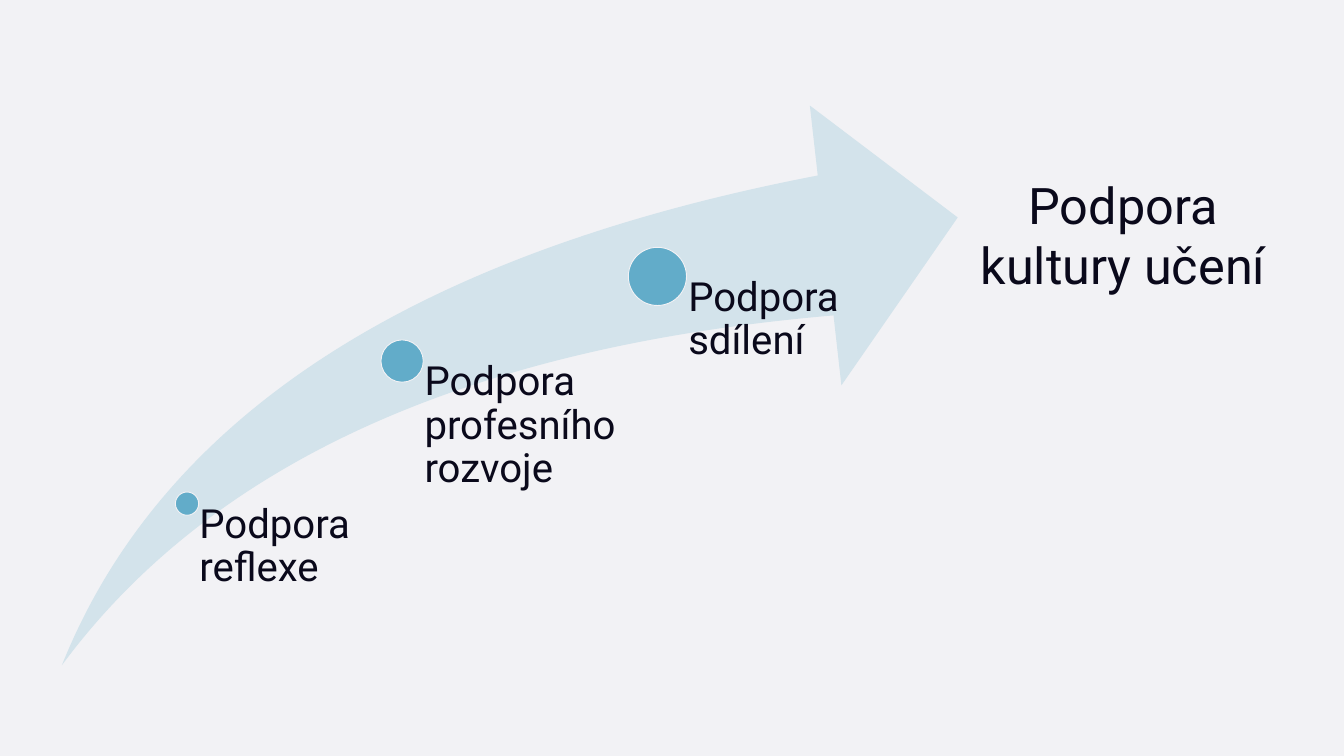
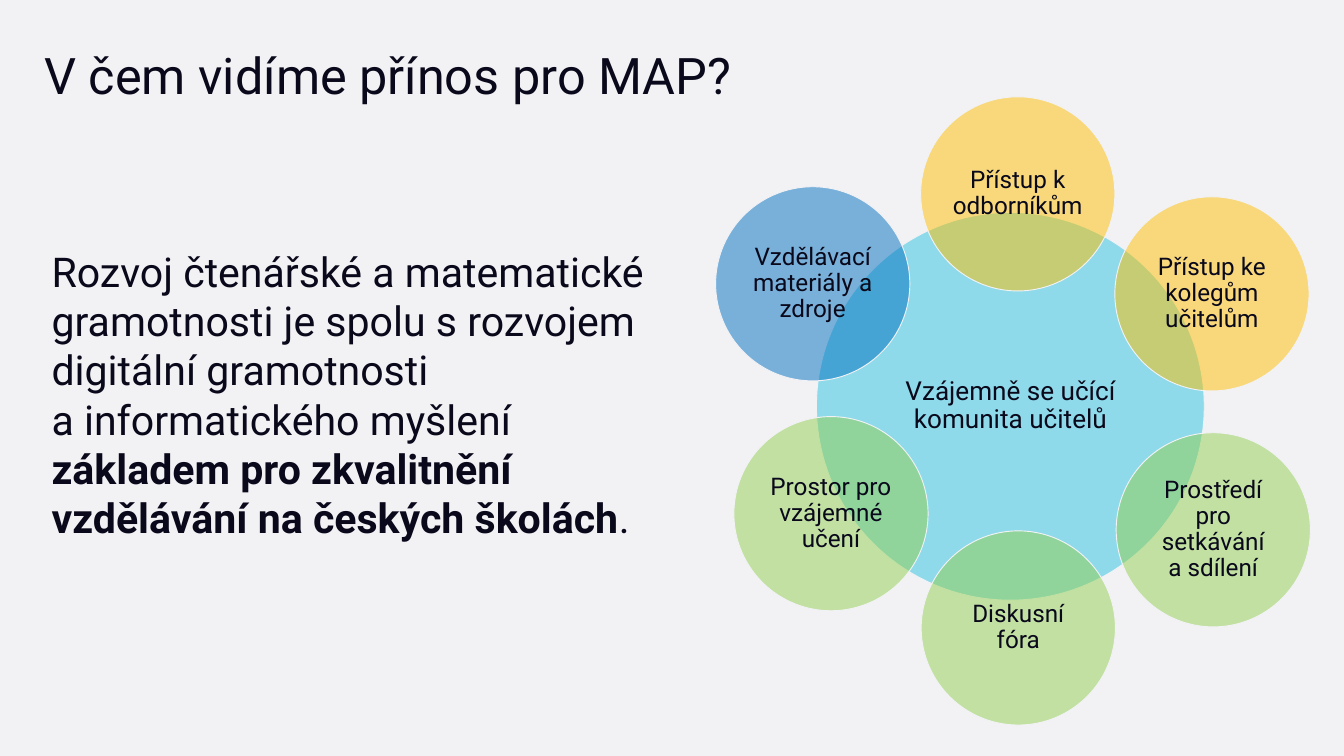
from lxml import etree
from pptx import Presentation
from pptx.dml.color import RGBColor
from pptx.enum import shapes, text
from pptx.oxml import ns
from pptx.util import Cm, Pt

COLORS = {
    "background": "F2F2F5",
    "ink": "0A091B",
    "arrow": "D3E3EB",
    "milestone": "62ACC9",
    "community": "2BC3E1",
    "access": "FFC000",
    "sharing": "92D050",
    "resources": "0070C0",
}
FONT = "Roboto"
NO_MARGINS = {f"margin_{side}": 0 for side in ("left", "top", "right", "bottom")}
SMALL_MARGINS = {side: Cm(0.1) for side in NO_MARGINS}
GROWING = {"auto_size": text.MSO_AUTO_SIZE.SHAPE_TO_FIT_TEXT}
CENTERED = {"alignment": text.PP_ALIGN.CENTER}
TIGHT = {"line_spacing": 0.9}
SQUARE_IN_CIRCLE = 0.5 ** 0.5

MILESTONES_BOTTOM = 25.15
MILESTONES = [
    ("Podpora reflexe", 7.07, 19.04, 0.88, 7.9),
    ("Podpora profesního rozvoje", 15.2, 13.65, 1.6, 8.13),
    ("Podpora sdílení", 24.85, 10.45, 2.2, 8.13),
]

COMMUNITY = ("Vzájemně se učící komunita učitelů", "community", 38.19, 15.36)
BENEFITS = [
    ("Přístup k odborníkům", "access", 38.47, 7.33),
    ("Přístup ke kolegům učitelům", "access", 45.81, 11.11),
    ("Prostředí pro setkávání\na sdílení", "sharing", 45.86, 20.03),
    ("Diskusní fóra", "sharing", 38.49, 23.74),
    ("Prostor pro vzájemné učení", "sharing", 31.41, 19.42),
    ("Vzdělávací materiály a zdroje", "resources", 30.72, 10.73),
]
STATEMENT = [
    ("Rozvoj čtenářské a matematické gramotnosti je spolu s rozvojem "
     "digitální gramotnosti \na informatického myšlení \n", False),
    ("základem pro zkvalitnění vzdělávání na českých školách", True),
    (".", False),
]


def apply_format(target, values):
    for name, value in values.items():
        setattr(target, name, value)


def paint(fill, color):
    fill.solid()
    fill.fore_color.rgb = RGBColor.from_string(COLORS[color])


def add_figure(canvas, preset, box, color):
    figure = canvas.add_shape(preset, *map(Cm, box))
    figure.shadow.inherit = False
    paint(figure.fill, color)
    figure.line.fill.background()
    return figure


def add_circle(canvas, x, y, diameter, color):
    box = (x - diameter / 2, y - diameter / 2, diameter, diameter)
    circle = add_figure(canvas, shapes.MSO_SHAPE.OVAL, box, color)
    paint(circle.line.fill, "background")
    circle.line.width = Pt(1)
    return circle


def make_half_transparent(figure):
    color = figure.fill._xPr.find(ns.qn("a:solidFill"))[0]
    etree.SubElement(color, ns.qn("a:alpha"), val="50000")


def add_words(canvas, box, runs, size, frame_format, paragraph_format):
    frame = canvas.add_textbox(*map(Cm, box)).text_frame
    apply_format(frame, {"word_wrap": True, **frame_format})
    paragraph = frame.paragraphs[0]
    apply_format(paragraph, paragraph_format)
    for words, bold in runs:
        for index, line in enumerate(words.split("\n")):
            if index:
                paragraph.add_line_break()
            if line:
                run = paragraph.add_run()
                run.text = line
                apply_format(run.font, {"name": FONT, "size": Pt(size), "bold": bold})
                run.font.color.rgb = RGBColor.from_string(COLORS["ink"])


def add_milestone(canvas, label, x, y, diameter, width):
    add_circle(canvas, x, y, diameter, "milestone")
    margins = {**NO_MARGINS, "margin_left": Cm(diameter * 0.53)}
    box = (x, y, width, MILESTONES_BOTTOM - y)
    add_words(canvas, box, [(label, False)], 43, margins, TIGHT)


def add_bubble(canvas, label, color, x, y, diameter, size):
    make_half_transparent(add_circle(canvas, x, y, diameter, color))
    side = diameter * SQUARE_IN_CIRCLE
    box = (x - side / 2, y - side / 2, side, side)
    middle = {**SMALL_MARGINS, "vertical_anchor": text.MSO_ANCHOR.MIDDLE}
    add_words(canvas, box, [(label, False)], size, middle, {**CENTERED, **TIGHT})


def build_path(slide):
    path_group = slide.shapes.add_group_shape().shapes
    arrow = add_figure(path_group, shapes.MSO_SHAPE.SWOOSH_ARROW,
                       (2.34, 3.99, 33.86, 21.16), "arrow")
    for index in range(2):
        arrow.adjustments[index] = 0.25
    for milestone in MILESTONES:
        add_milestone(path_group, *milestone)
    add_words(slide.shapes, (36.2, 6.45, 12.5, 4.88),
              [("Podpora kultury učení", False)], 54, GROWING, CENTERED)


def build_benefits(slide):
    add_words(slide.shapes, (0.64, 1.55, 27.74, 2.57),
              [("V čem vidíme přínos pro MAP? ", False)], 54, GROWING,
              {"alignment": text.PP_ALIGN.RIGHT})
    add_words(slide.shapes, (1.7, 9.19, 23.93, 11.53), STATEMENT, 44, GROWING,
              {"space_after": Pt(12)})
    bubbles = slide.shapes.add_group_shape().shapes
    add_bubble(bubbles, *COMMUNITY, 14.66, 28)
    for benefit in BENEFITS:
        add_bubble(bubbles, *benefit, 7.34, 26)


def main():
    deck = Presentation()
    apply_format(deck, {"slide_width": Cm(50.8), "slide_height": Cm(28.58)})
    paint(deck.slide_master.background.fill, "background")
    for build in (build_path, build_benefits):
        build(deck.slides.add_slide(deck.slide_layouts[6]))
    deck.save("out.pptx")


if __name__ == "__main__":
    main()
